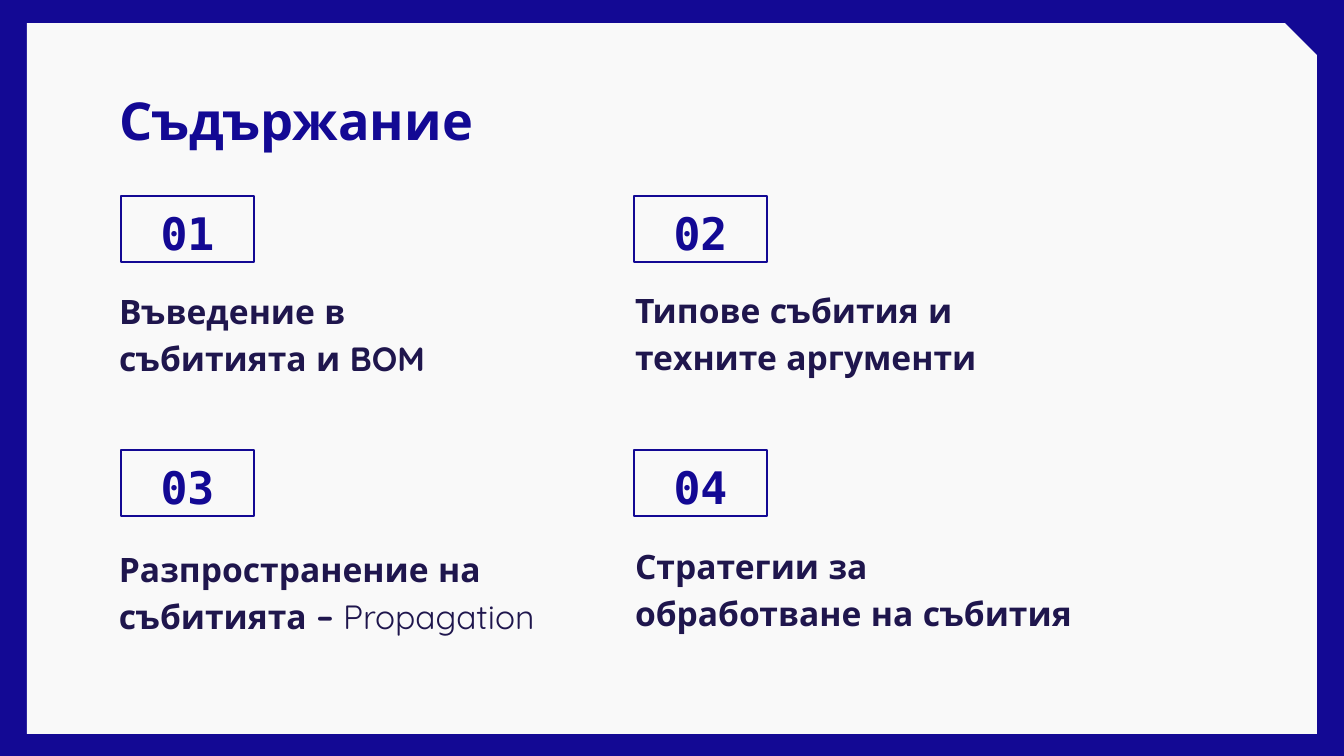
from pptx import Presentation
from pptx.dml.color import RGBColor
from pptx.enum.shapes import MSO_SHAPE
from pptx.enum.text import MSO_ANCHOR, MSO_AUTO_SIZE, PP_ALIGN
from pptx.util import Pt

EMU_PER_PX = 914400 / 134.4
COLORS = {"blue": "130994", "panel": "F9F9F9", "ink": "1F164D"}
BADGE_LEFTS = (121, 634)
BADGE_TOPS = (196, 450)
BADGE_SIZE = (133, 66)
TOPICS = [
    ([("Въведение в събитията и BOM", True)], (106, 320, 379, 71)),
    ([("Типове събития и техните аргументи", True)], (622, 319, 417, 71)),
    ([("Разпространение на събитията – ", True), ("Propagation", False)], (106, 499, 474, 150)),
    ([("Стратегии за обработване на събития", True)], (622, 575, 477, 71)),
]


def px(length):
    """Turn pixels into EMU."""
    return round(length * EMU_PER_PX)


def color(name):
    """Look up a named colour."""
    return RGBColor.from_string(COLORS[name])


def write_text(shape, spans, size, ink, font="Quicksand",
               align=PP_ALIGN.LEFT, anchor=MSO_ANCHOR.TOP):
    """Fill a shape with one paragraph of (text, bold) spans."""
    frame = shape.text_frame
    frame.word_wrap = True
    frame.auto_size = MSO_AUTO_SIZE.NONE
    frame.vertical_anchor = anchor
    frame.margin_left = frame.margin_right = px(13)
    frame.margin_top = frame.margin_bottom = px(13)
    para = frame.paragraphs[0]
    para.alignment = align
    para.line_spacing = 1.15
    for text, bold in spans:
        span = para.add_run()
        span.text = text
        span.font.name = font
        span.font.size = Pt(size)
        span.font.bold = bold
        span.font.color.rgb = color(ink)


def add_panel(page):
    """Place the pale panel with its snipped corner behind the title."""
    panel = page.shapes.add_shape(MSO_SHAPE.SNIP_1_RECTANGLE, px(27), px(23), px(1290), px(711))
    panel.adjustments[0] = 0.045
    panel.shadow.inherit = False
    panel.fill.solid()
    panel.fill.fore_color.rgb = color("panel")
    panel.line.fill.background()
    page.shapes.title.element.addprevious(panel.element)


def add_title(page, text):
    """Move and format the title placeholder."""
    title = page.shapes.title
    title.left, title.top, title.width, title.height = map(px, (106, 66, 1133, 85))
    write_text(title, [(text, True)], 28, "blue")


def add_badge(page, number, left, top):
    """Draw an outlined box holding a topic number."""
    badge = page.shapes.add_shape(MSO_SHAPE.RECTANGLE, *map(px, (left, top, *BADGE_SIZE)))
    badge.shadow.inherit = False
    badge.fill.background()
    badge.line.color.rgb = color("blue")
    badge.line.width = Pt(0.75)
    write_text(badge, [(f"{number:02}", True)], 24, "blue", font="DejaVu Sans Mono",
               align=PP_ALIGN.CENTER, anchor=MSO_ANCHOR.MIDDLE)


def add_caption(page, spans, bounds):
    """Add a topic name resting on the bottom of its box."""
    box = page.shapes.add_textbox(*map(px, bounds))
    write_text(box, spans, 18, "ink", anchor=MSO_ANCHOR.BOTTOM)


def main():
    """Build the contents slide."""
    deck = Presentation()
    deck.slide_width, deck.slide_height = px(1344), px(756)
    page = deck.slides.add_slide(deck.slide_layouts[5])
    page.background.fill.solid()
    page.background.fill.fore_color.rgb = color("blue")
    add_panel(page)
    add_title(page, "Съдържание")
    for index, (spans, bounds) in enumerate(TOPICS):
        row, column = divmod(index, 2)
        add_badge(page, index + 1, BADGE_LEFTS[column], BADGE_TOPS[row])
        add_caption(page, spans, bounds)
    deck.save("out.pptx")


if __name__ == "__main__":
    main()
